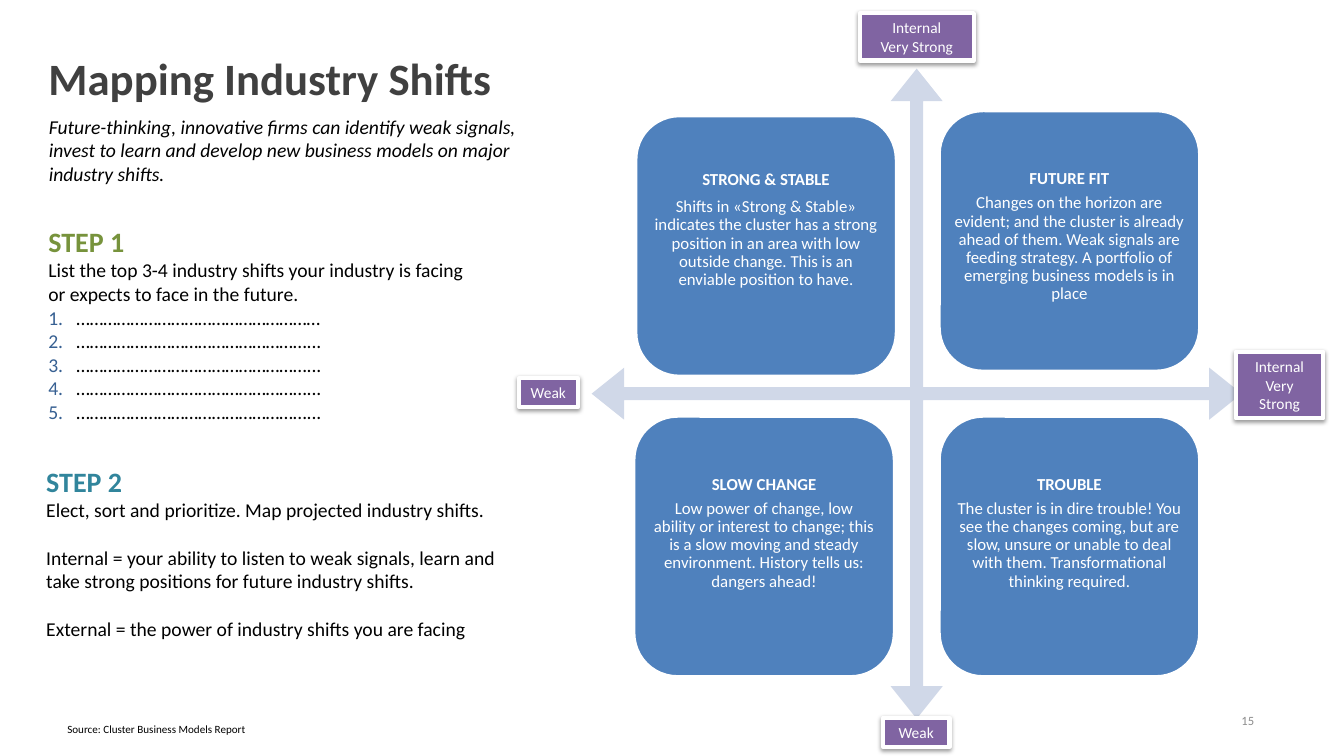
from dataclasses import dataclass

from lxml import etree
from pptx import Presentation
from pptx.dml.color import RGBColor
from pptx.enum.shapes import MSO_SHAPE as SHAPE
from pptx.enum.text import MSO_ANCHOR as ANCHOR, PP_ALIGN as ALIGN
from pptx.oxml import parse_xml
from pptx.oxml.ns import nsdecls, qn
from pptx.util import Pt


@dataclass(frozen=True)
class Theme:
    """Colours and type sizes of the slide."""
    font: str = "Calibri"
    white: str = "FFFFFF"
    black: str = "000000"
    title: str = "404040"
    muted: str = "8C8C8C"
    axis: str = "D0D8E8"
    card: str = "4F81BD"
    label: str = "8064A2"
    step1: str = "77933C"
    step2: str = "31859C"
    number: str = "376092"
    title_size: float = 32
    step_size: float = 20
    body_size: float = 14
    card_size: float = 12
    label_size: float = 11
    page_size: float = 9
    source_size: float = 7.9


THEME = Theme()


def add_text(tf, text, size=THEME.body_size, color=THEME.black, bold=False, italic=False,
             align=ALIGN.LEFT, spacing=None, before=0, after=0, number=None):
    """Add one formatted paragraph, filling the first one if it is empty."""
    p = tf.paragraphs[0] if not tf.text else tf.add_paragraph()
    p.alignment = align
    p.space_before, p.space_after = Pt(before), Pt(after)
    if spacing:
        p.line_spacing = spacing
    if number:
        pPr = p._p.get_or_add_pPr()
        pPr.set("marL", str(Pt(20)))
        pPr.set("indent", str(Pt(-20)))
        clr = etree.SubElement(pPr, qn("a:buClr"))
        etree.SubElement(clr, qn("a:srgbClr")).set("val", number)
        etree.SubElement(pPr, qn("a:buAutoNum")).set("type", "arabicPeriod")
    r = p.add_run()
    r.text = text
    f = r.font
    f.name, f.size, f.bold, f.italic = THEME.font, Pt(size), bold, italic
    f.color.rgb = RGBColor.from_string(color)


class SlideBuilder:
    """Holds the theme and the current slide, and adds its elements."""

    def __init__(self, slide, theme):
        """Keep the slide and its theme."""
        self.slide, self.theme = slide, theme

    def frame(self, sp, anchor=ANCHOR.TOP, insets=(7.2, 3.6, 7.2, 3.6)):
        """Set wrapping, anchor and insets, and return the text frame."""
        tf = sp.text_frame
        tf.word_wrap, tf.vertical_anchor = True, anchor
        tf.margin_left, tf.margin_top, tf.margin_right, tf.margin_bottom = map(Pt, insets)
        return tf

    def title(self, text, *box):
        """Place and format the title placeholder."""
        sp = self.slide.shapes.title
        sp.left, sp.top, sp.width, sp.height = map(Pt, box)
        tf = self.frame(sp, ANCHOR.MIDDLE, (0, 0, 0, 0))
        add_text(tf, text, self.theme.title_size, self.theme.title, bold=True)

    def text(self, *box, **layout):
        """Add a text box and return its frame."""
        return self.frame(self.slide.shapes.add_textbox(*map(Pt, box)), **layout)

    def shape(self, kind, box, fill, line=0):
        """Add a filled preset shape with an optional white outline."""
        sp = self.slide.shapes.add_shape(kind, *map(Pt, box))
        sp.shadow.inherit = False
        sp.fill.solid()
        sp.fill.fore_color.rgb = RGBColor.from_string(fill)
        if line:
            sp.line.color.rgb = RGBColor.from_string(self.theme.white)
            sp.line.width = Pt(line)
        else:
            sp.line.fill.background()
        return sp

    def axes(self, *box):
        """Add the four-way arrow."""
        sp = self.shape(SHAPE.QUAD_ARROW, box, self.theme.axis)
        for i, value in enumerate((0.02, 0.04, 0.05)):
            sp.adjustments[i] = value

    def card(self, x, y, heading, body, top=33.5, side=0, gap=4.2):
        """Add a rounded quadrant card with a heading and body."""
        t = self.theme
        sp = self.shape(SHAPE.ROUNDED_RECTANGLE, (x, y, 185.8, 185.8), t.card, 2)
        tf = self.frame(sp, insets=(side, top, side, 0))
        style = dict(size=t.card_size, color=t.white, align=ALIGN.CENTER, spacing=0.9)
        add_text(tf, heading, bold=True, after=gap, **style)
        add_text(tf, body, **style)

    def label(self, box, *lines):
        """Add a shadowed label at one end of an axis."""
        t = self.theme
        sp = self.shape(SHAPE.RECTANGLE, box, t.label, 3)
        effects = sp._element.spPr.find(qn("a:effectLst"))
        effects.append(parse_xml(
            f'<a:outerShdw {nsdecls("a")} blurRad="{Pt(3.1)}" dist="{Pt(1.6)}" dir="5400000" '
            f'rotWithShape="0"><a:srgbClr val="{t.black}"><a:alpha val="38000"/>'
            '</a:srgbClr></a:outerShdw>'))
        tf = self.frame(sp, ANCHOR.MIDDLE)
        for line in lines:
            add_text(tf, line, t.label_size, t.white, align=ALIGN.CENTER)


def main():
    """Build the slide and save it."""
    prs = Presentation()
    prs.slide_width, prs.slide_height = Pt(960), Pt(540)
    s = SlideBuilder(prs.slides.add_slide(prs.slide_layouts[5]), THEME)

    s.title("Mapping Industry Shifts", 34.6, 39.6, 378, 31.7)
    add_text(s.text(27.8, 78.5, 363, 58.3),
             "Future-thinking, innovative firms can identify weak signals, invest to learn "
             "and develop new business models on major industry shifts.", italic=True)

    tf = s.text(27.4, 157, 317.5, 161.3)
    add_text(tf, "STEP 1", THEME.step_size, THEME.step1, bold=True)
    add_text(tf, "List the top 3-4 industry shifts your industry is facing "
                 "or expects to face in the future.")
    for blank in ["………………………………………………"] + ["……………………………………………..."] * 4:
        add_text(tf, blank, number=THEME.number)

    tf = s.text(25.9, 328.3, 345, 133.2)
    add_text(tf, "STEP 2", THEME.step_size, THEME.step2, bold=True)
    add_text(tf, "Elect, sort and prioritize. Map projected industry shifts.")
    for note in ("Internal = your ability to listen to weak signals, learn and take strong "
                 "positions for future industry shifts.",
                 "External = the power of industry shifts you are facing"):
        add_text(tf, note, before=17)

    s.axes(422.6, 49, 464.4, 464.4)
    s.card(454.3, 82.8, "STRONG & STABLE",
           "Shifts in «Strong & Stable» indicates the cluster has a strong position in an area "
           "with low outside change. This is an enviable position to have.", top=30, gap=6.8)
    s.card(671, 79.2, "FUTURE FIT",
           "Changes on the horizon are evident; and the cluster is already ahead of them. Weak "
           "signals are feeding strategy. A portfolio of emerging business models is in place")
    s.card(452.9, 297.4, "SLOW CHANGE",
           "Low power of change, low ability or interest to change; this is a slow moving and "
           "steady environment. History tells us: dangers ahead!", side=5)
    s.card(671, 297.4, "TROUBLE",
           "The cluster is in dire trouble! You see the changes coming, but are slow, unsure or "
           "unable to deal with them. Transformational thinking required.", side=3.6)

    s.label((614.2, 9.4, 81.4, 33.8), "Internal", "Very Strong")
    s.label((630.7, 512.6, 47.5, 20.9), "Weak")
    s.label((370.8, 270, 41.8, 20.9), "Weak")
    s.label((882.7, 251.3, 62.6, 47.5), "Internal", "Very Strong")

    add_text(s.text(41, 512.6, 236, 16.6), "Source: Cluster Business Models Report",
             THEME.source_size)
    add_text(s.text(871.2, 500.4, 40.3, 28.8, anchor=ANCHOR.MIDDLE, insets=(0, 0, 0, 0)),
             "15", THEME.page_size, THEME.muted, align=ALIGN.CENTER)
    prs.save("out.pptx")


if __name__ == "__main__":
    main()
